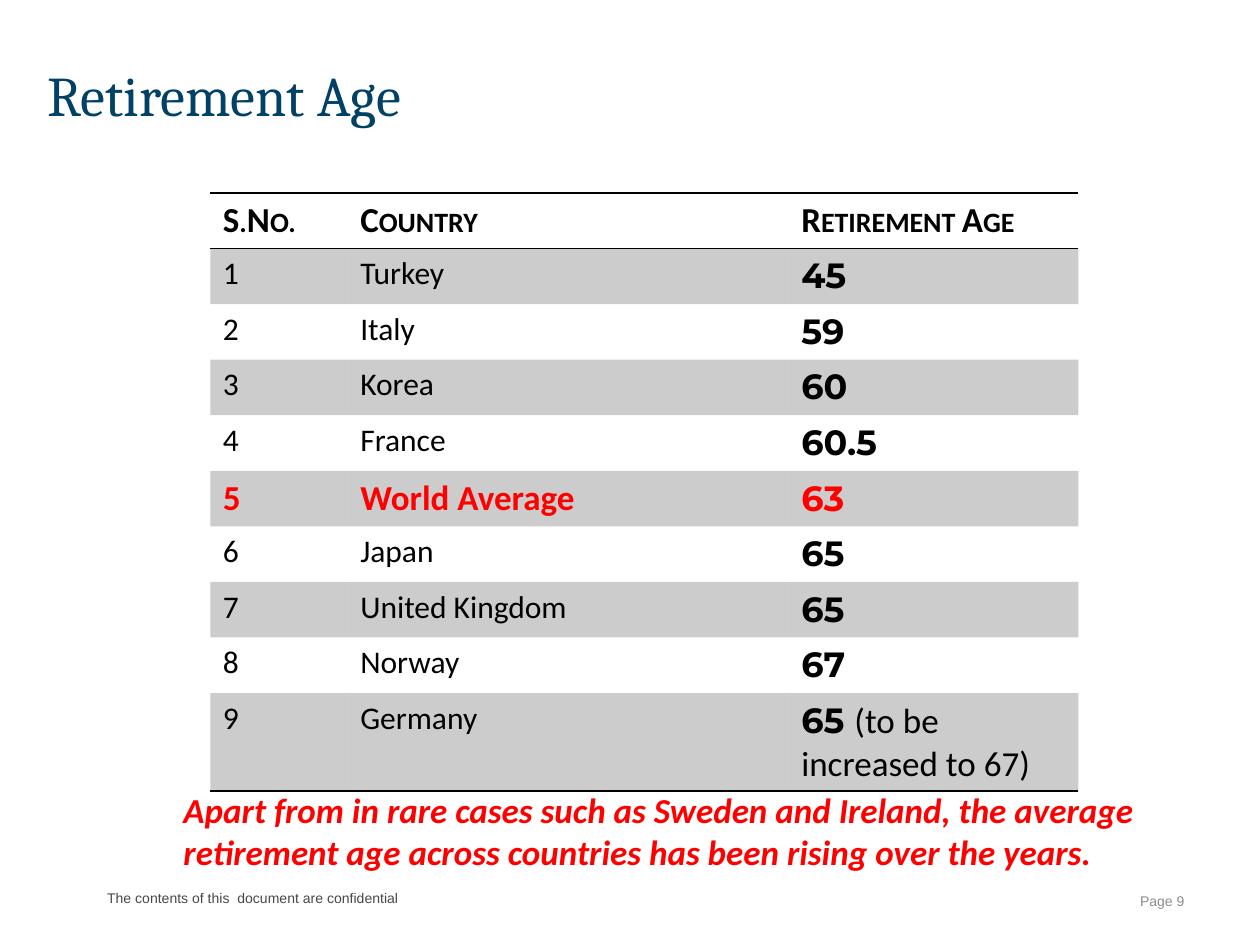
from dataclasses import dataclass
from typing import NamedTuple

from lxml.etree import SubElement
from pptx import Presentation
from pptx.dml.color import RGBColor
from pptx.enum.text import MSO_ANCHOR as Anchor, PP_ALIGN as Align
from pptx.oxml.ns import qn
from pptx.util import Cm, Pt


@dataclass(frozen=True)
class Theme:
    heading_font: str = "Cambria"
    body_font: str = "Calibri"
    figure_font: str = "Montserrat"
    footer_font: str = "Arial"
    heading_color: str = "004165"
    ink: str = "000000"
    accent: str = "FF0000"
    footer_color: str = "464847"
    page_color: str = "8C8C8C"
    heading_size: int = 32
    strong_size: int = 20
    body_size: int = 18
    footer_size: int = 8
    band_alpha: int = 20
    rule_width: float = 1


class Box(NamedTuple):
    left: float
    top: float
    width: float
    height: float


class Country(NamedTuple):
    name: str
    age: str
    remark: str = ""
    highlighted: bool = False


THEME = Theme()
HEADERS = ("S.No.", "Country", "Retirement Age")
COUNTRIES = (
    Country("Turkey", "45"),
    Country("Italy", "59"),
    Country("Korea", "60"),
    Country("France", "60.5"),
    Country("World Average", "63", highlighted=True),
    Country("Japan", "65"),
    Country("United Kingdom", "65"),
    Country("Norway", "67"),
    Country("Germany", "65 ", "(to be increased to 67)"),
)
COLUMN_WIDTHS = (2.77, 8.89, 5.84)
ROW_HEIGHT, LAST_ROW_HEIGHT = 1.12, 1.98


def add_text(frame, text: str, *, font: str = THEME.body_font,
             size: float = THEME.body_size, color: str = THEME.ink,
             bold: bool = False, italic: bool = False,
             small_caps: bool = False, align=None) -> None:
    """Append a formatted run to the first paragraph of a text frame."""
    paragraph = frame.paragraphs[0]
    if align is not None:
        paragraph.alignment = align
    run = paragraph.add_run()
    run.text = text
    run.font.name = font
    run.font.size = Pt(size)
    run.font.bold = bold
    run.font.italic = italic
    run.font.color.rgb = RGBColor.from_string(color)
    if small_caps:
        run.font._element.set("cap", "small")


def add_box(slide, box: Box, text: str, *, anchor=Anchor.TOP,
            inset: bool = True, **text_format) -> None:
    frame = slide.shapes.add_textbox(*map(Cm, box)).text_frame
    frame.word_wrap = True
    frame.vertical_anchor = anchor
    if not inset:
        frame.margin_left = frame.margin_right = 0
        frame.margin_top = frame.margin_bottom = 0
    add_text(frame, text, **text_format)


def add_rule(cell, side: str) -> None:
    """Draw a cell border; call before the cell is filled."""
    line = SubElement(cell._tc.get_or_add_tcPr(), qn(f"a:ln{side}"),
                      w=str(Pt(THEME.rule_width)))
    fill = SubElement(line, qn("a:solidFill"))
    SubElement(fill, qn("a:srgbClr"), val=THEME.ink)


def shade(cell, banded: bool) -> None:
    if not banded:
        cell.fill.background()
        return
    cell.fill.solid()
    cell.fill.fore_color.rgb = RGBColor.from_string(THEME.ink)
    color = cell._tc.tcPr.find(f"{qn('a:solidFill')}/{qn('a:srgbClr')}")
    SubElement(color, qn("a:alpha"), val=str(THEME.band_alpha * 1000))


def fill_country_row(cells, number: int, country: Country) -> None:
    color = THEME.accent if country.highlighted else THEME.ink
    size = THEME.strong_size if country.highlighted else THEME.body_size
    for cell, text in zip(cells, (str(number), country.name)):
        add_text(cell.text_frame, text, size=size, color=color,
                 bold=country.highlighted)
    age_frame = cells[2].text_frame
    add_text(age_frame, country.age, font=THEME.figure_font,
             size=THEME.strong_size, color=color, bold=True)
    if country.remark:
        add_text(age_frame, country.remark, size=THEME.strong_size)


def add_age_table(slide, left: float, top: float) -> None:
    heights = [ROW_HEIGHT] * len(COUNTRIES) + [LAST_ROW_HEIGHT]
    box = Box(left, top, sum(COLUMN_WIDTHS), sum(heights))
    table = slide.shapes.add_table(len(heights), len(HEADERS),
                                   *map(Cm, box)).table
    table.horz_banding = False
    # The "No Style, No Grid" table style
    style = table._tbl.tblPr.find(qn("a:tableStyleId"))
    style.text = "{2D5ABB26-0587-4C30-8999-92F81FD0307C}"
    for column, width in zip(table.columns, COLUMN_WIDTHS):
        column.width = Cm(width)

    last = len(COUNTRIES)
    for index, (row, height) in enumerate(zip(table.rows, heights)):
        row.height = Cm(height)
        cells = list(row.cells)
        sides = {0: "TB", last: "B"}.get(index, "")
        for cell in cells:
            for side in sides:
                add_rule(cell, side)
            shade(cell, banded=index % 2 == 1)
        if index:
            fill_country_row(cells, index, COUNTRIES[index - 1])
        else:
            for cell, header in zip(cells, HEADERS):
                add_text(cell.text_frame, header, size=THEME.strong_size,
                         bold=True, small_caps=True)


def main() -> None:
    deck = Presentation()
    deck.slide_width, deck.slide_height = Cm(25.4), Cm(19.05)
    slide = deck.slides.add_slide(deck.slide_layouts[6])

    add_box(slide, Box(2.16, 17.93, 9.53, 0.58),
            "The contents of this  document are confidential",
            inset=False, font=THEME.footer_font, size=THEME.footer_size,
            color=THEME.footer_color, align=Align.JUSTIFY)
    add_box(slide, Box(18.21, 17.65, 5.92, 1.02), "Page 9",
            anchor=Anchor.MIDDLE, font=THEME.footer_font,
            size=THEME.footer_size, color=THEME.page_color, align=Align.RIGHT)
    add_box(slide, Box(0.71, 1.24, 21.03, 1.32), "Retirement Age",
            anchor=Anchor.MIDDLE, font=THEME.heading_font,
            size=THEME.heading_size, color=THEME.heading_color)
    add_age_table(slide, 4.24, 3.89)
    add_box(slide, Box(3.45, 15.77, 22.81, 1.96),
            "Apart from in rare cases such as Sweden and Ireland, the average "
            "retirement age across countries has been rising over the years.",
            size=THEME.strong_size, color=THEME.accent, bold=True, italic=True)

    deck.save("out.pptx")


if __name__ == "__main__":
    main()
